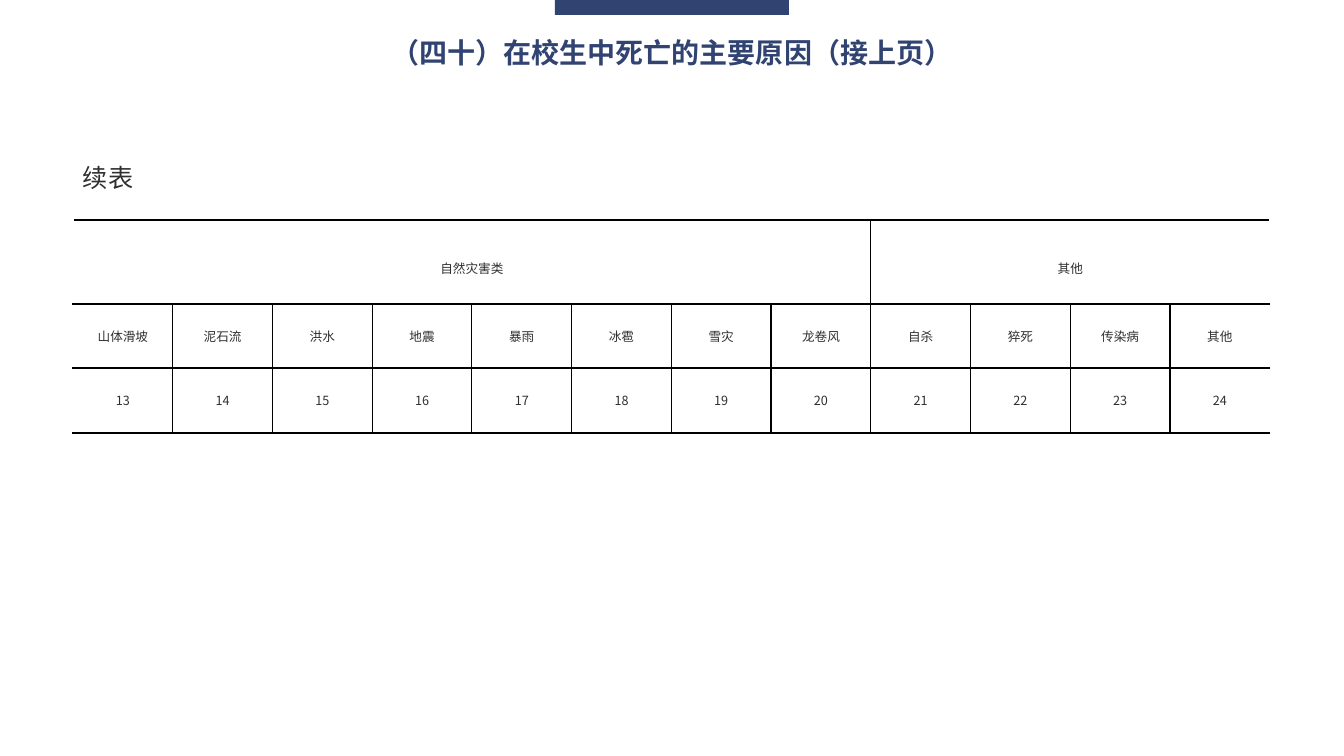
"""Build the slide listing the main causes of death among enrolled students."""
import pptx
import pptx.dml.color
import pptx.enum.shapes
import pptx.enum.text
import pptx.oxml.ns
import pptx.util
from lxml import etree

TITLE = "（四十）在校生中死亡的主要原因（接上页）"
LABEL = "续表"
GROUPS = [
    ("自然灾害类", ["山体滑坡", "泥石流", "洪水", "地震", "暴雨", "冰雹", "雪灾", "龙卷风"]),
    ("其他", ["自杀", "猝死", "传染病", "其他"]),
]
FIRST_NUMBER = 13

SANS, SERIF = "Noto Sans CJK SC", "Times New Roman"
NAVY, GREY, BLACK = "304371", "2F2F2F", "000000"
TABLE_LEFT, TABLE_TOP, TABLE_WIDTH = 73, 220, 1197
ROW_HEIGHTS = [84, 64, 65]
ALIGN = pptx.enum.text.PP_ALIGN


def px(length):
    return round(length * 914400 / 100.8)


def color(value):
    return pptx.dml.color.RGBColor.from_string(value)


def write(paragraph, text, size, font, ink, align, bold=False, spacing=None):
    paragraph.text = text
    paragraph.alignment = align
    if spacing:
        paragraph.line_spacing = pptx.util.Pt(spacing)
    paragraph.font.size = pptx.util.Pt(size)
    paragraph.font.bold = bold
    paragraph.font.color.rgb = color(ink)
    paragraph.font.name = font
    properties = paragraph._p.pPr.find(pptx.oxml.ns.qn("a:defRPr"))
    etree.SubElement(properties, pptx.oxml.ns.qn("a:ea"), typeface=SANS)


def add_text(slide, box, *style, **options):
    shape = slide.shapes.add_textbox(*map(px, box))
    shape.text_frame.word_wrap = False
    write(shape.text_frame.paragraphs[0], *style, **options)


def add_borders(cell, sides):
    properties = cell._tc.get_or_add_tcPr()
    for side in sides:
        line = etree.SubElement(properties, pptx.oxml.ns.qn("a:ln" + side), w=str(pptx.util.Pt(1)))
        fill = etree.SubElement(line, pptx.oxml.ns.qn("a:solidFill"))
        etree.SubElement(fill, pptx.oxml.ns.qn("a:srgbClr"), val=BLACK)


def fill_cell(cell, text, font, spacing=None):
    write(cell.text_frame.paragraphs[0], text, 9, font, GREY, ALIGN.CENTER, spacing=spacing)


def add_causes_table(slide):
    causes = [cause for group, members in GROUPS for cause in members]
    count = len(causes)
    table = slide.shapes.add_table(
        len(ROW_HEIGHTS), count, px(TABLE_LEFT), px(TABLE_TOP), px(TABLE_WIDTH), px(sum(ROW_HEIGHTS))
    ).table
    table.first_row = table.horz_banding = False
    for row, height in zip(table.rows, ROW_HEIGHTS):
        row.height = px(height)
    for column in table.columns:
        column.width = px(TABLE_WIDTH / count)

    group_starts, start = set(), 0
    for group, members in GROUPS:
        end = start + len(members)
        table.cell(0, start).merge(table.cell(0, end - 1))
        fill_cell(table.cell(0, start), group, SERIF, spacing=22)
        group_starts.add(start)
        start = end
    for index, cause in enumerate(causes):
        fill_cell(table.cell(1, index), cause, SERIF)
        fill_cell(table.cell(2, index), str(FIRST_NUMBER + index), SANS)

    for row_index in range(len(ROW_HEIGHTS)):
        dividers = (group_starts if row_index == 0 else set(range(count))) - {0}
        for index in range(count):
            cell = table.cell(row_index, index)
            left = ["L"] if index in dividers else []
            right = ["R"] if index + 1 in dividers else []
            add_borders(cell, left + right + ["T", "B"])
            cell.fill.background()
            cell.vertical_anchor = pptx.enum.text.MSO_ANCHOR.MIDDLE
            cell.margin_left = cell.margin_right = px(7)
            cell.margin_top = cell.margin_bottom = 0


def main():
    presentation = pptx.Presentation()
    presentation.slide_width, presentation.slide_height = px(1344), px(756)
    slide = presentation.slides.add_slide(presentation.slide_layouts[6])

    tab = slide.shapes.add_shape(
        pptx.enum.shapes.MSO_SHAPE.RECTANGLE, px(555), px(-1), px(234), px(16)
    )
    tab.shadow.inherit = False
    tab.fill.solid()
    tab.fill.fore_color.rgb = color(NAVY)
    tab.line.fill.background()

    add_text(slide, (379, 31, 586, 44), TITLE, 20, SANS, NAVY, ALIGN.CENTER, bold=True)
    add_text(slide, (73, 168, 72, 31), LABEL, 18, SANS, GREY, ALIGN.JUSTIFY, spacing=14)
    add_causes_table(slide)
    presentation.save("out.pptx")


if __name__ == "__main__":
    main()
